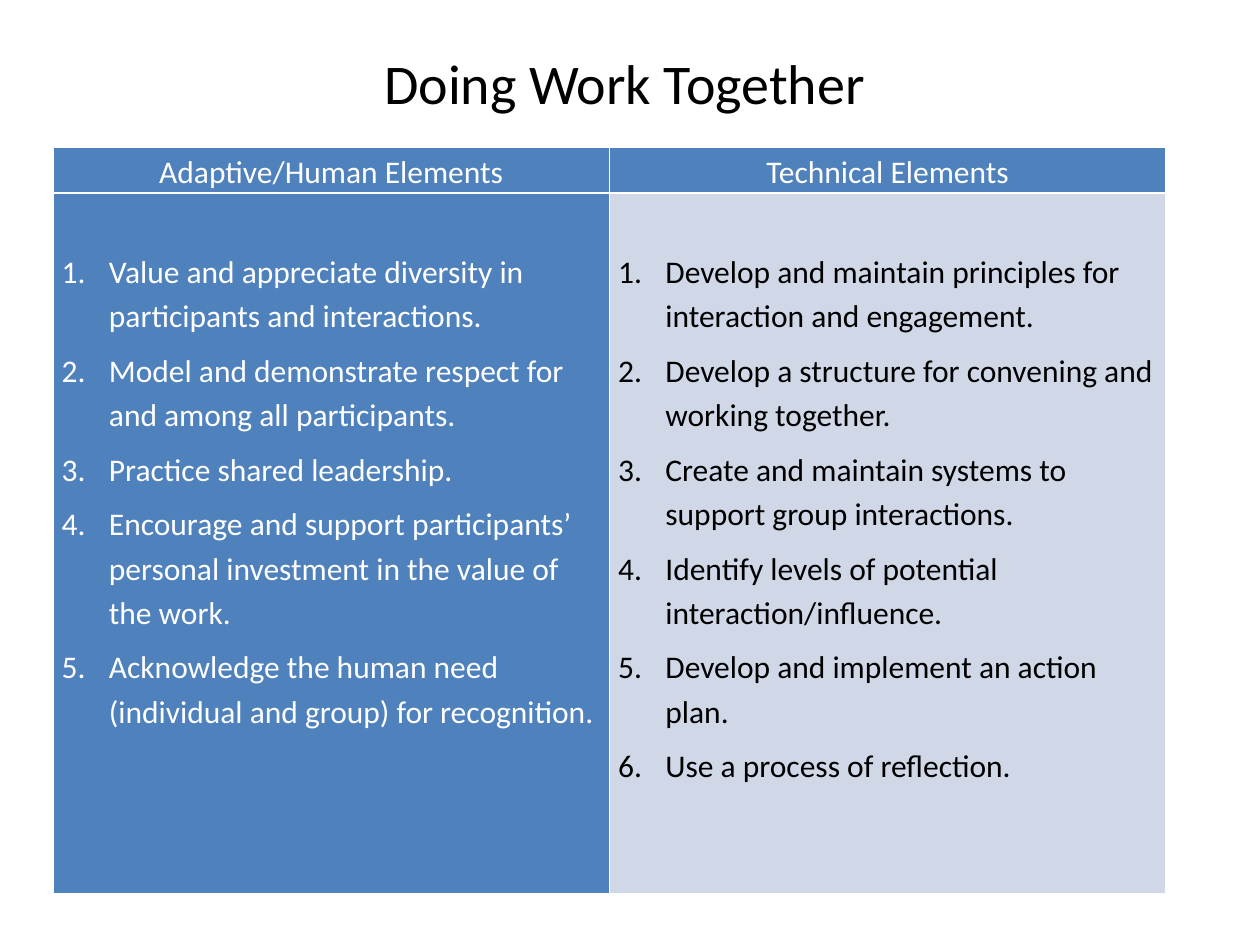
from dataclasses import dataclass

from lxml import etree
from pptx import Presentation
from pptx.dml.color import RGBColor
from pptx.enum.text import MSO_ANCHOR, PP_ALIGN
from pptx.oxml.ns import qn
from pptx.util import Pt

LEFT, CENTER = PP_ALIGN.LEFT, PP_ALIGN.CENTER
TOP, MIDDLE = MSO_ANCHOR.TOP, MSO_ANCHOR.MIDDLE


@dataclass(frozen=True)
class Theme:
    font: str = "Calibri"
    black: str = "000000"
    white: str = "FFFFFF"
    blue: str = "4F81BD"
    pale: str = "D0D8E8"
    title: float = 32
    body: float = 18


HEADS = ["Adaptive/Human Elements", "Technical Elements"]
LISTS = [
    [
        "Value and appreciate diversity in participants and interactions.",
        "Model and demonstrate respect for and among all participants.",
        "Practice shared leadership.",
        "Encourage and support participants’ personal investment in the value of the work.",
        "Acknowledge the human need (individual and group) for recognition.",
    ],
    [
        "Develop and maintain principles for interaction and engagement.",
        "Develop a structure for convening and working together.",
        "Create and maintain systems to support group interactions.",
        "Identify levels of potential interaction/influence.",
        "Develop and implement an action plan.",
        "Use a process of reflection.",
    ],
]


def write(par, text, *, font, size, color, align=LEFT, line=1, after=0, indent=0):
    par.alignment = align
    par.line_spacing = line
    par.space_after = Pt(after)
    run = par.add_run()
    run.text = text
    run.font.name = font
    run.font.size = Pt(size)
    run.font.bold = False
    run.font.color.rgb = RGBColor.from_string(color)
    if indent:
        props = par._p.get_or_add_pPr()
        props.set("marL", str(Pt(indent)))
        props.set("indent", str(-Pt(indent)))
        etree.SubElement(props, qn("a:buFont"), typeface="+mj-lt")
        etree.SubElement(props, qn("a:buAutoNum"), type="arabicPeriod")


class Deck:
    def __init__(self, theme, slide):
        self.theme = theme
        self.slide = slide

    def title(self, text, left, top, width, height):
        box = self.slide.shapes.title
        box.left, box.top = Pt(left), Pt(top)
        box.width, box.height = Pt(width), Pt(height)
        box.text_frame.vertical_anchor = MIDDLE
        write(box.text_frame.paragraphs[0], text, font=self.theme.font,
              size=self.theme.title, color=self.theme.black, align=CENTER)

    def table(self, cols, left, top, width, rows):
        shape = self.slide.shapes.add_table(
            len(rows), cols, Pt(left), Pt(top), Pt(width), Pt(sum(rows)))
        grid = shape.table
        for row, height in zip(grid.rows, rows):
            row.height = Pt(height)
        for col in grid.columns:
            col.width = Pt(width / cols)
        return grid

    def cell(self, cell, lines, fill, color, pad=0, **style):
        cell.margin_left = cell.margin_right = Pt(5)
        cell.margin_top, cell.margin_bottom = Pt(pad), Pt(0)
        cell.vertical_anchor = TOP
        cell.fill.solid()
        cell.fill.fore_color.rgb = RGBColor.from_string(fill)
        self.border(cell)
        frame = cell.text_frame
        for i, text in enumerate(lines):
            par = frame.add_paragraph() if i else frame.paragraphs[0]
            write(par, text, font=self.theme.font, size=self.theme.body,
                  color=color, line=1.15, **style)

    def border(self, cell):
        props = cell._tc.get_or_add_tcPr()
        for i, side in enumerate("LRTB"):
            line = etree.Element(qn(f"a:ln{side}"), w=str(Pt(1)))
            fill = etree.SubElement(line, qn("a:solidFill"))
            etree.SubElement(fill, qn("a:srgbClr"), val=self.theme.white)
            props.insert(i, line)


def main():
    show = Presentation()
    show.slide_width, show.slide_height = Pt(720), Pt(540)
    theme = Theme()
    deck = Deck(theme, show.slides.add_slide(show.slide_layouts[5]))
    deck.title("Doing Work Together", 36, 21.6, 642, 50.4)

    grid = deck.table(len(HEADS), 30.24, 84.24, 636, [25.92, 400.32])
    looks = [(theme.blue, theme.white), (theme.pale, theme.black)]
    for i, (head, items, (fill, color)) in enumerate(zip(HEADS, LISTS, looks)):
        deck.cell(grid.cell(0, i), [head], theme.blue, theme.white, align=CENTER)
        deck.cell(grid.cell(1, i), items, fill, color, pad=31.3, after=6, indent=27)
    show.save("out.pptx")


if __name__ == "__main__":
    main()
